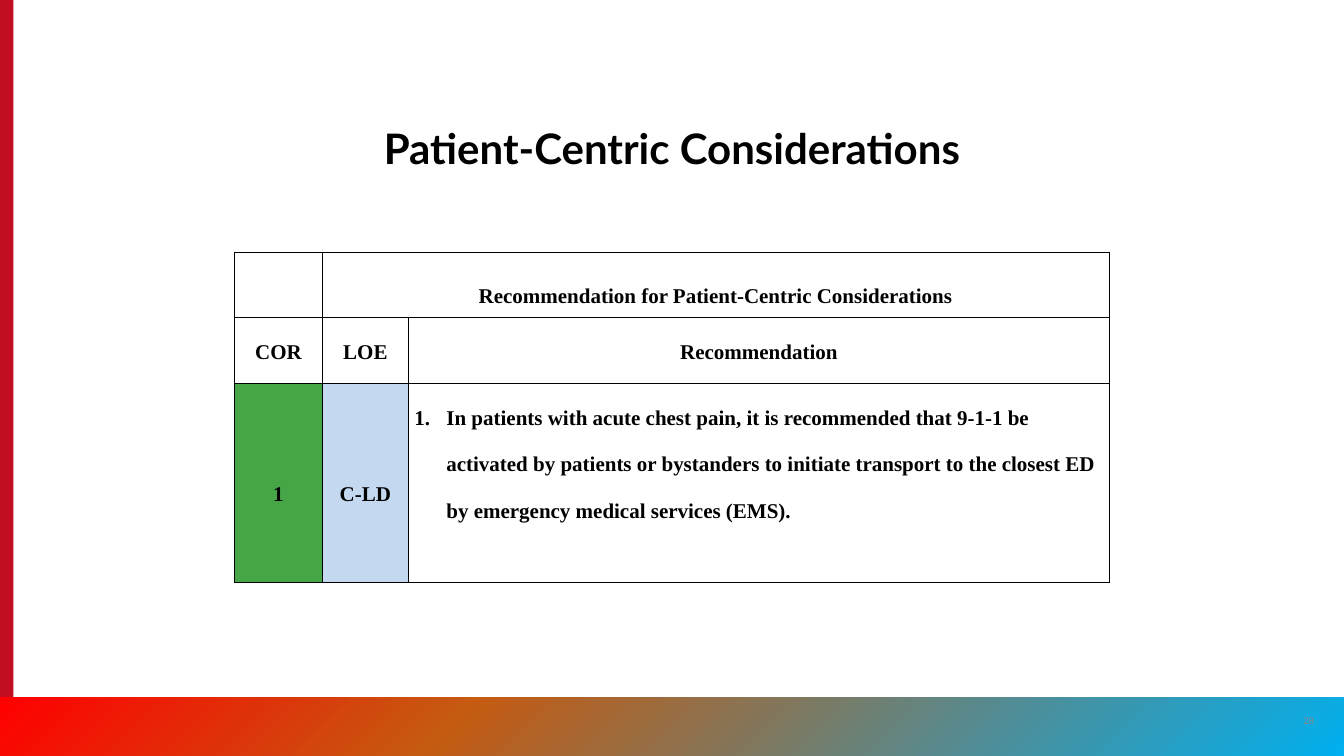
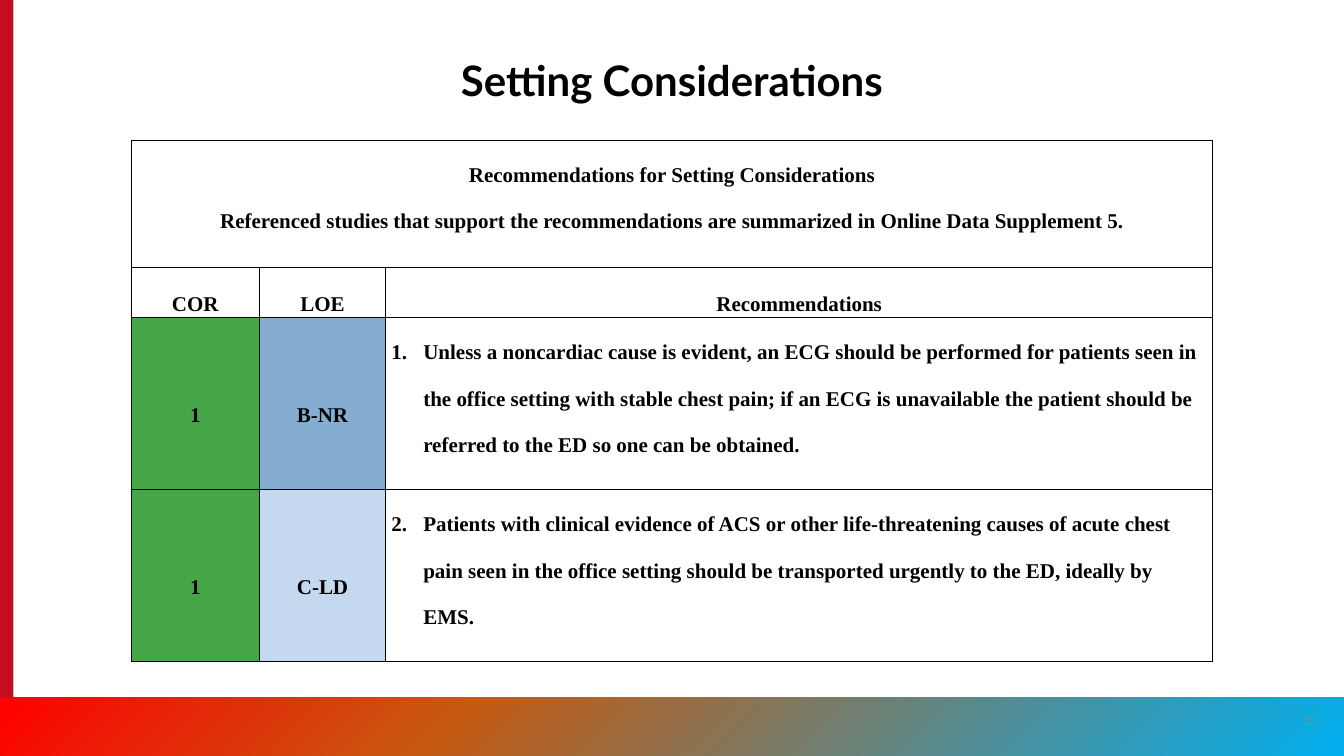
from copy import deepcopy

from lxml.etree import SubElement
from pptx import Presentation
from pptx.dml.color import RGBColor
from pptx.enum.shapes import MSO_SHAPE
from pptx.enum.text import MSO_ANCHOR, MSO_AUTO_SIZE, PP_ALIGN
from pptx.oxml.ns import qn
from pptx.util import Inches, Pt

COLORS = {
    "text": "000000",
    "number": "8A8B8A",
    "edge": "C10E21",
    "band_blue": "00B0F0",
    "band_orange": "C55A11",
    "band_red": "FF0000",
    "strong": "45A547",
    "B-NR": "85ADD1",
    "C-LD": "C4D9F0",
}
COLUMNS, ROWS = 16, 9
TITLE_FONT, TABLE_FONT = "Lato", "Times New Roman"
TOP, MIDDLE = MSO_ANCHOR.TOP, MSO_ANCHOR.MIDDLE


class Deck:
    """Holds the presentation, its style and the current slide."""

    def __init__(self):
        self.presentation = Presentation()
        self.presentation.slide_width = Inches(16)
        self.presentation.slide_height = Inches(9)
        self.column = self.presentation.slide_width // COLUMNS
        self.row = self.presentation.slide_height // ROWS
        self.slide = None

    def color(self, name):
        return RGBColor.from_string(COLORS[name])

    def box(self, left, top, width, height):
        return (int(left * self.column), int(top * self.row),
                int(width * self.column), int(height * self.row))

    def style(self, paragraph, font, size, color="text", bold=True, align=PP_ALIGN.CENTER):
        paragraph.alignment = align
        paragraph.font.name = font
        paragraph.font.size = Pt(size)
        paragraph.font.bold = bold
        paragraph.font.color.rgb = self.color(color)

    def add_slide(self, title, title_top, title_width, number):
        layout = self.presentation.slide_layouts[5]
        self.slide = self.presentation.slides.add_slide(layout)
        self.rectangle(0, 0, 0.16, ROWS, "edge")
        self.gradient_band()
        self.title(title, title_top, title_width)
        self.page_number(number)

    def rectangle(self, left, top, width, height, color):
        rectangle = self.slide.shapes.add_shape(
            MSO_SHAPE.RECTANGLE, *self.box(left, top, width, height))
        rectangle.shadow.inherit = False
        rectangle.line.fill.background()
        rectangle.fill.solid()
        rectangle.fill.fore_color.rgb = self.color(color)
        return rectangle

    def gradient_band(self):
        band = self.rectangle(0, ROWS - 0.7, COLUMNS, 0.7, "band_red")
        band.rotation = 180
        band.fill.gradient()
        gradient = band._element.spPr.find(qn("a:gradFill"))
        stop_list = gradient.find(qn("a:gsLst"))
        stop_list.append(deepcopy(stop_list[-1]))
        gradient.find(qn("a:lin")).set("ang", str(45 * 60000))
        stops = ((0, "band_blue"), (0.66, "band_orange"), (1, "band_red"))
        for stop, (position, color) in zip(band.fill.gradient_stops, stops):
            stop.position = position
            stop.color.rgb = self.color(color)

    def title(self, text, top, width):
        title = self.slide.shapes.title
        title.left, title.top, title.width, title.height = self.box(
            (COLUMNS - width) / 2, top, width, 0.63)
        frame = title.text_frame
        frame.auto_size = MSO_AUTO_SIZE.NONE
        frame.vertical_anchor = TOP
        frame.margin_top = Inches(0.14)
        frame.text = text
        frame.paragraphs[0].line_spacing = 0.9
        self.style(frame.paragraphs[0], TITLE_FONT, 36)

    def page_number(self, number):
        frame = self.slide.shapes.add_textbox(*self.box(15.34, 8.34, 0.48, 0.48)).text_frame
        frame.word_wrap = True
        frame.vertical_anchor = MIDDLE
        frame.text = str(number)
        self.style(frame.paragraphs[0], TITLE_FONT, 8, "number", bold=False)

    def border(self, cell):
        properties = cell._tc.get_or_add_tcPr()
        for index, side in enumerate(("lnL", "lnR", "lnT", "lnB")):
            line = SubElement(properties, qn(f"a:{side}"), w=str(Pt(1)))
            fill = SubElement(line, qn("a:solidFill"))
            SubElement(fill, qn("a:srgbClr"), val=COLORS["text"])
            properties.insert(index, line)

    def cell(self, cell, text, anchor=MIDDLE, fill=None, item=None):
        cell.margin_left = cell.margin_right = Inches(0.07)
        cell.margin_top = cell.margin_bottom = 0
        cell.vertical_anchor = anchor
        if fill:
            cell.fill.solid()
            cell.fill.fore_color.rgb = self.color(fill)
        cell.text = text
        for paragraph in cell.text_frame.paragraphs:
            paragraph.line_spacing = 2.0
            if item:
                self.number_item(paragraph, item)
            align = PP_ALIGN.LEFT if item else PP_ALIGN.CENTER
            self.style(paragraph, TABLE_FONT, 18, align=align)

    def number_item(self, paragraph, start):
        properties = paragraph._p.get_or_add_pPr()
        properties.set("marL", str(Inches(0.38)))
        properties.set("indent", str(-Inches(0.38)))
        SubElement(properties, qn("a:buAutoNum"), type="arabicPeriod", startAt=str(start))

    def recommendations(self, top, widths, heights, heading, heading_column,
                        heading_anchor, labels, label_anchor, items):
        left = (COLUMNS - sum(widths)) / 2
        table = self.slide.shapes.add_table(
            len(heights), len(widths),
            *self.box(left, top, sum(widths), sum(heights))).table
        table.first_row = table.horz_banding = False
        for column, width in zip(table.columns, widths):
            column.width = int(width * self.column)
        for row, height in zip(table.rows, heights):
            row.height = int(height * self.row)
        for cell in table.iter_cells():
            cell.fill.background()
            self.border(cell)
        table.cell(0, heading_column).merge(table.cell(0, len(widths) - 1))
        self.cell(table.cell(0, heading_column), heading, heading_anchor)
        for column, label in enumerate(labels):
            self.cell(table.cell(1, column), label, label_anchor)
        for number, (strength, evidence, advice) in enumerate(items, 1):
            row = number + 1
            self.cell(table.cell(row, 0), strength, fill="strong")
            self.cell(table.cell(row, 1), evidence, fill=evidence)
            self.cell(table.cell(row, 2), advice, TOP, item=number)


def main():
    deck = Deck()

    deck.add_slide("Patient-Centric Considerations", 1.39, 8.92, 28)
    deck.recommendations(
        3, (1.04, 1.03, 8.34), (0.78, 0.78, 2.37),
        "Recommendation for Patient-Centric Considerations", 1, MIDDLE,
        ("COR", "LOE", "Recommendation"), TOP,
        [("1", "C-LD",
          "In patients with acute chest pain, it is recommended that 9-1-1 be activated "
          "by patients or bystanders to initiate transport to the closest ED by "
          "emergency medical services (EMS).")])

    deck.add_slide("Setting Considerations", 0.58, 7, 32)
    deck.recommendations(
        1.67, (1.53, 1.5, 9.85), (1.51, 0.56, 2.05, 2.05),
        "Recommendations for Setting Considerations\n"
        "Referenced studies that support the recommendations are summarized in "
        "Online Data Supplement 5.", 0, TOP,
        ("COR", "LOE", "Recommendations"), MIDDLE,
        [("1", "B-NR",
          "Unless a noncardiac cause is evident, an ECG should be performed for patients "
          "seen in the office setting with stable chest pain; if an ECG is unavailable "
          "the patient should be referred to the ED so one can be obtained."),
         ("1", "C-LD",
          "Patients with clinical evidence of ACS or other life-threatening causes of "
          "acute chest pain seen in the office setting should be transported urgently "
          "to the ED, ideally by EMS.")])

    deck.presentation.save("out.pptx")


if __name__ == "__main__":
    main()
